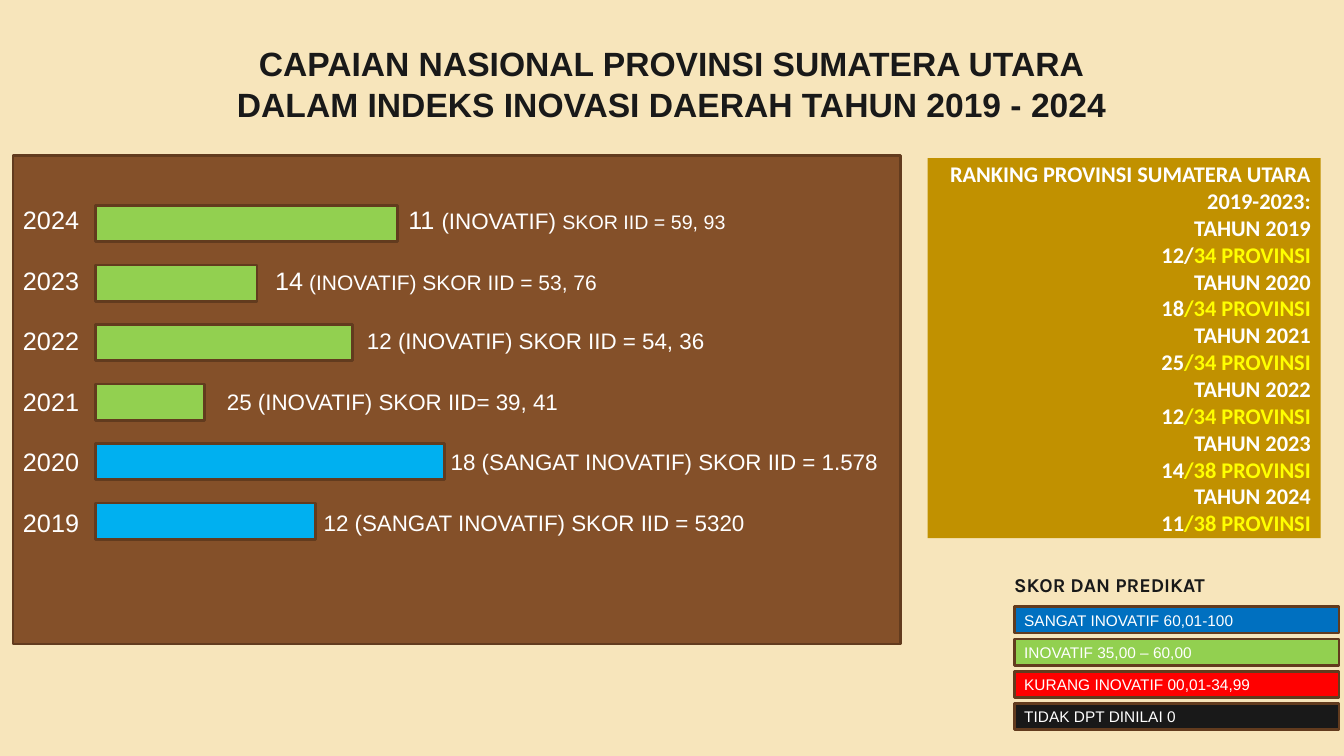
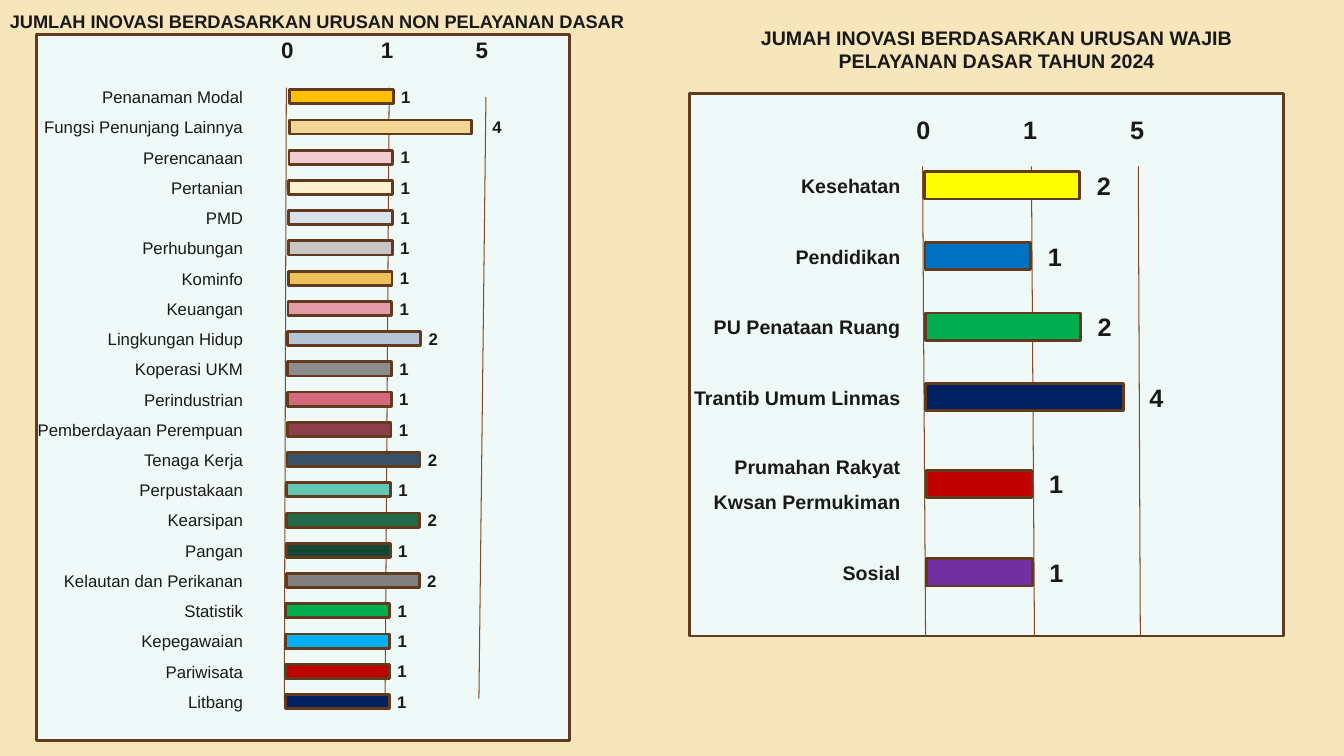
"""Build two slides on the regional innovation index of a province."""
from dataclasses import dataclass

from lxml import etree
from pptx import Presentation
from pptx.dml.color import RGBColor
from pptx.enum.shapes import MSO_CONNECTOR, MSO_SHAPE
from pptx.enum.text import MSO_ANCHOR, PP_ALIGN
from pptx.oxml.ns import qn
from pptx.util import Inches, Pt

RECTANGLE = MSO_SHAPE.RECTANGLE
STRAIGHT = MSO_CONNECTOR.STRAIGHT
MIDDLE = MSO_ANCHOR.MIDDLE
LEFT, CENTER, RIGHT = PP_ALIGN.LEFT, PP_ALIGN.CENTER, PP_ALIGN.RIGHT


@dataclass(frozen=True)
class Theme:
    """Colours, fonts and type sizes of the presentation."""
    background: str = "F7E5BB"
    ink: str = "191919"
    white: str = "FFFFFF"
    yellow: str = "FFFF00"
    outline: str = "623B1E"
    gridline: str = "834E26"
    brown: str = "845029"
    gold: str = "C19100"
    chart_panel: str = "EFF9F7"
    green: str = "92D050"
    sky: str = "00B0F0"
    blue: str = "0070C0"
    red: str = "FF0000"
    font: str = "Arial"
    ranking_font: str = "Calibri"
    legend_font: str = "Karla"
    title: int = 24
    large: int = 18
    body: int = 16
    medium: int = 15
    small: int = 14
    heading: int = 13
    label: int = 12
    legend: int = 11


THEME = Theme()


@dataclass(frozen=True)
class BarChart:
    """Geometry, type sizes and rows of one drawn bar chart."""
    panel: tuple
    gridlines: tuple
    tick_lefts: tuple
    tick_center: float
    label_left: float
    label_width: float
    bar_left: float
    bar_lean: float
    bar_height: float
    bar_widths: dict
    number_gap: float
    tick_size: int
    label_size: int
    number_size: int
    label_bold: bool
    centers: tuple
    rows: tuple


ACHIEVEMENTS = (
    ("2024", 2.99, THEME.green, 4.05,
     [("11 ", {"size": THEME.large}), ("(INOVATIF) ", {}),
      ("SKOR IID = 59, 93", {"size": THEME.small})]),
    ("2023", 1.6, THEME.green, 2.73,
     [("14", {"size": THEME.large}),
      (" (INOVATIF) SKOR IID = 53, 76", {"size": THEME.medium})]),
    ("2022", 2.55, THEME.green, 3.64, "12 (INOVATIF) SKOR IID = 54, 36"),
    ("2021", 1.08, THEME.green, 2.25, "25 (INOVATIF) SKOR IID= 39, 41"),
    ("2020", 3.46, THEME.sky, 4.47, "18 (SANGAT INOVATIF) SKOR IID = 1.578"),
    ("2019", 2.18, THEME.sky, 3.21, "12 (SANGAT INOVATIF) SKOR IID = 5320"),
)

RANKINGS = (
    ("2019", "12/", "34 PROVINSI"),
    ("2020", "18", "/34 PROVINSI"),
    ("2021", "25", "/34 PROVINSI"),
    ("2022", "12", "/34 PROVINSI"),
    ("2023", "14", "/38 PROVINSI"),
    ("2024", "11", "/38 PROVINSI"),
)

SCORE_BANDS = (
    ("SANGAT INOVATIF 60,01-100", THEME.blue),
    ("INOVATIF 35,00 – 60,00", THEME.green),
    ("KURANG INOVATIF 00,01-34,99", THEME.red),
    ("TIDAK DPT DINILAI 0", THEME.ink),
)

OTHER_AFFAIRS_ROWS = (
    ("Penanaman Modal", 1, "FFC000"),
    ("Fungsi Penunjang Lainnya", 4, "F2D694"),
    ("Perencanaan", 1, "F0CDD3"),
    ("Pertanian", 1, "FEF1D0"),
    ("PMD", 1, "D9E2EA"),
    ("Perhubungan", 1, "C6C6C6"),
    ("Kominfo", 1, "ECC05A"),
    ("Keuangan", 1, "E29BA7"),
    ("Lingkungan Hidup", 2, "B3C5D6"),
    ("Koperasi UKM", 1, "8C8C8C"),
    ("Perindustrian", 1, "D3697B"),
    ("Pemberdayaan Perempuan", 1, "8D3E4C"),
    ("Tenaga Kerja", 2, "395269"),
    ("Perpustakaan", 1, "64C6B3"),
    ("Kearsipan", 2, "21694B"),
    ("Pangan", 1, "164632"),
    ("Kelautan dan Perikanan", 2, "808080"),
    ("Statistik", 1, "00B050"),
    ("Kepegawaian", 1, THEME.sky),
    ("Pariwisata", 1, "C00000"),
    ("Litbang", 1, "002060"),
)

OTHER_AFFAIRS = BarChart(
    panel=(0.36, 0.34, 5.29, 7.01),
    gridlines=((2.84, 0.87, 2.82, 6.96), (3.86, 0.87, 3.82, 6.93),
               (4.82, 0.96, 4.75, 6.93)),
    tick_lefts=(2.69, 3.68, 4.62), tick_center=0.49,
    label_left=0.24, label_width=2.27,
    bar_left=2.87, bar_lean=-0.04, bar_height=0.14,
    bar_widths={1: 1.03, 2: 1.32, 4: 1.81}, number_gap=-0.02,
    tick_size=THEME.body, label_size=THEME.label, number_size=THEME.label,
    label_bold=False,
    centers=tuple(0.96 + 0.3 * row for row in range(len(OTHER_AFFAIRS_ROWS))),
    rows=OTHER_AFFAIRS_ROWS,
)

BASIC_AFFAIRS = BarChart(
    panel=(6.84, 0.93, 5.89, 5.38),
    gridlines=((9.15, 1.65, 9.18, 6.31), (10.23, 1.65, 10.26, 6.31),
               (11.29, 1.65, 11.31, 6.31)),
    tick_lefts=(8.99, 10.05, 11.11), tick_center=1.28,
    label_left=6.7, label_width=2.33,
    bar_left=9.17, bar_lean=0.02, bar_height=0.27,
    bar_widths={1: 1.05, 2: 1.54, 4: 1.96}, number_gap=0.07,
    tick_size=THEME.large, label_size=THEME.small, number_size=THEME.large,
    label_bold=True,
    centers=(1.84, 2.54, 3.24, 3.94, 4.8, 5.68),
    rows=(
        ("Kesehatan", 2, THEME.yellow),
        ("Pendidikan", 1, THEME.blue),
        ("PU Penataan Ruang", 2, "00B050"),
        ("Trantib Umum Linmas", 4, "002060"),
        ("Prumahan Rakyat Kwsan Permukiman", 1, "C00000"),
        ("Sosial", 1, "7030A0"),
    ),
)


def write_text(shape, paragraphs, size, color=THEME.ink, font=THEME.font,
               bold=False, align=LEFT, line_spacing=None, inset=0.1):
    """Fill a shape with paragraphs, each a string or a list of styled runs."""
    frame = shape.text_frame
    frame.word_wrap = True
    frame.vertical_anchor = MIDDLE
    frame.margin_left = frame.margin_right = Inches(inset)
    frame.margin_top = frame.margin_bottom = 0
    for index, content in enumerate(paragraphs):
        paragraph = frame.add_paragraph() if index else frame.paragraphs[0]
        paragraph.alignment = align
        if line_spacing:
            paragraph.line_spacing = line_spacing
        runs = [(content, {})] if isinstance(content, str) else content
        for text, style in runs:
            run = paragraph.add_run()
            run.text = text
            run.font.name = font
            run.font.bold = bold
            run.font.size = Pt(style.get("size", size))
            run.font.color.rgb = RGBColor.from_string(style.get("color", color))


def add_text(slide, left, center, width, height, paragraphs, **text_format):
    """Add a text box centred vertically on a given height."""
    shape = slide.shapes.add_textbox(
        Inches(left), Inches(center - height / 2), Inches(width), Inches(height))
    write_text(shape, paragraphs, **text_format)


def add_box(slide, left, top, width, height, fill, outlined=True):
    """Add a filled rectangle, with the shared outline if wanted."""
    shape = slide.shapes.add_shape(
        RECTANGLE, Inches(left), Inches(top), Inches(width), Inches(height))
    shape.shadow.inherit = False
    shape.fill.solid()
    shape.fill.fore_color.rgb = RGBColor.from_string(fill)
    if outlined:
        shape.line.color.rgb = RGBColor.from_string(THEME.outline)
        shape.line.width = Pt(2)
    else:
        shape.line.fill.background()
    return shape


def add_gridline(slide, *ends):
    """Add a thin line between two points."""
    connector = slide.shapes.add_connector(STRAIGHT, *map(Inches, ends))
    connector.line.color.rgb = RGBColor.from_string(THEME.gridline)
    connector.line.width = Pt(0.75)
    etree.SubElement(connector._element.spPr, qn("a:effectLst"))


def add_achievements(slide):
    """Add the panel with a bar and a score for each year."""
    add_box(slide, 0.13, 1.54, 8.8, 4.85, THEME.brown)
    for row, (year, width, color, score_left, score) in enumerate(ACHIEVEMENTS):
        center = 2.18 + 0.6 * row
        add_box(slide, 0.95, 2.04 + 0.59 * row, width, 0.36, color)
        add_text(slide, 0.13, center, 0.8, 0.36, [year],
                 size=THEME.large, color=THEME.white)
        add_text(slide, score_left, center, 8.9 - score_left, 0.36, [score],
                 size=THEME.body, color=THEME.white, inset=0)


def add_rankings(slide):
    """Add the panel that lists the rank of each year."""
    paragraphs = ["RANKING PROVINSI SUMATERA UTARA", "2019-2023:"]
    for year, rank, total in RANKINGS:
        paragraphs += [f"TAHUN {year}",
                       [(rank, {}), (total, {"color": THEME.yellow})]]
    panel = add_box(slide, 9.2, 1.57, 3.9, 3.77, THEME.gold, outlined=False)
    write_text(panel, paragraphs, size=THEME.body, color=THEME.white,
               font=THEME.ranking_font, bold=True, align=RIGHT)


def add_legend(slide):
    """Add the heading and the coloured score bands."""
    add_text(slide, 9.96, 5.8, 3.3, 0.3, ["SKOR DAN PREDIKAT"],
             size=THEME.small, font=THEME.legend_font, bold=True)
    for row, (text, color) in enumerate(SCORE_BANDS):
        band = add_box(slide, 10.06, 6.02 + 0.32 * row, 3.22, 0.26, color)
        write_text(band, [text], size=THEME.legend, color=THEME.white)


def add_bar_chart(slide, chart):
    """Draw a chart panel with its gridlines, ticks, bars and numbers."""
    add_box(slide, *chart.panel, THEME.chart_panel)
    for gridline in chart.gridlines:
        add_gridline(slide, *gridline)
    for left, tick in zip(chart.tick_lefts, ("0", "1", "5")):
        add_text(slide, left, chart.tick_center, 0.52, 0.38, [tick],
                 size=chart.tick_size, bold=True)
    last_gridline = (chart.gridlines[-1][0] + chart.gridlines[-1][2]) / 2
    last_row = len(chart.rows) - 1
    for row, (label, value, color) in enumerate(chart.rows):
        center = chart.centers[row]
        left = chart.bar_left + chart.bar_lean * row / last_row
        width = chart.bar_widths[value]
        end = left + width
        touches_gridline = end < last_gridline < end + 0.25
        number_left = last_gridline if touches_gridline else end + chart.number_gap
        add_text(slide, chart.label_left, center - 0.004 * chart.label_size,
                 chart.label_width, 0.3, [label], size=chart.label_size,
                 bold=chart.label_bold, align=RIGHT, line_spacing=1.5)
        add_box(slide, left, center - chart.bar_height / 2, width,
                chart.bar_height, color)
        add_text(slide, number_left, center, 0.52, 0.3, [str(value)],
                 size=chart.number_size, bold=True)


def main():
    """Build and save the presentation."""
    presentation = Presentation()
    presentation.slide_width = Inches(13.33)
    presentation.slide_height = Inches(7.5)
    background = presentation.slide_master.background.fill
    background.solid()
    background.fore_color.rgb = RGBColor.from_string(THEME.background)
    blank = presentation.slide_layouts[6]
    title_style = {"bold": True, "align": CENTER}

    slide = presentation.slides.add_slide(blank)
    add_text(slide, 0.13, 0.83, 13.06, 0.91,
             ["CAPAIAN NASIONAL PROVINSI SUMATERA UTARA",
              "DALAM INDEKS INOVASI DAERAH TAHUN 2019 - 2024"],
             size=THEME.title, **title_style)
    add_achievements(slide)
    add_rankings(slide)
    add_legend(slide)

    slide = presentation.slides.add_slide(blank)
    add_bar_chart(slide, OTHER_AFFAIRS)
    add_bar_chart(slide, BASIC_AFFAIRS)
    add_text(slide, 0.04, 0.21, 6.2, 0.32,
             ["JUMLAH INOVASI BERDASARKAN URUSAN NON PELAYANAN DASAR"],
             size=THEME.heading, inset=0, **title_style)
    add_text(slide, 7.4, 0.49, 4.97, 0.57,
             ["JUMAH INOVASI BERDASARKAN URUSAN WAJIB PELAYANAN DASAR TAHUN 2024"],
             size=THEME.small, **title_style)
    presentation.save("out.pptx")


if __name__ == "__main__":
    main()
